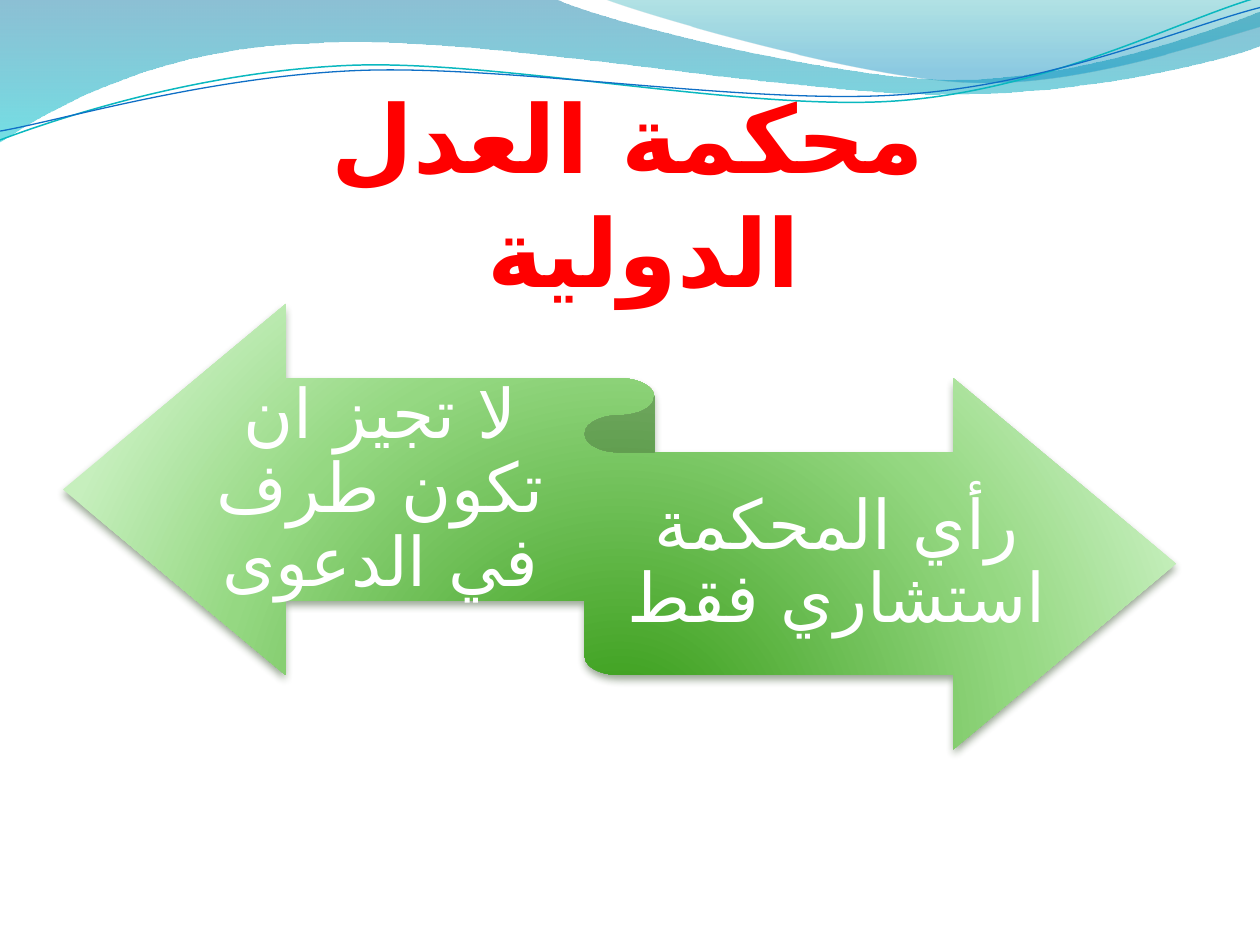
from lxml import etree
from pptx import Presentation
from pptx.dml.color import RGBColor
from pptx.enum.shapes import MSO_SHAPE
from pptx.enum.text import MSO_ANCHOR, MSO_AUTO_SIZE, PP_ALIGN
from pptx.oxml.ns import qn
from pptx.util import Pt

RIBBON = MSO_SHAPE.LEFT_RIGHT_RIBBON
TOP, MIDDLE = MSO_ANCHOR.TOP, MSO_ANCHOR.MIDDLE
CENTER = PP_ALIGN.CENTER
NO_AUTOFIT = MSO_AUTO_SIZE.NONE

FONT = "TeX Gyre Pagella"
ARABIC_FONT = "DejaVu Sans"
WHITE = RGBColor(0xFF, 0xFF, 0xFF)
RED = RGBColor(0xFF, 0x00, 0x00)
DEEP_BLUE = RGBColor(0x00, 0x74, 0xA1)
AQUA = RGBColor(0x00, 0xC6, 0xCF)
TEAL = RGBColor(0x00, 0xA1, 0xA9)
SKY = RGBColor(0x00, 0x8B, 0xBF)
TEAL_LINE = RGBColor(0x0A, 0xB8, 0xBF)
BLUE_LINE = RGBColor(0x0F, 0x6F, 0xC6)
DARK_GREEN = RGBColor(0x31, 0x98, 0x11)
MID_GREEN = RGBColor(0x95, 0xD8, 0x82)
PALE_GREEN = RGBColor(0xC6, 0xEF, 0xBD)
SHADOW_GREEN = RGBColor(0x2B, 0x48, 0x21)

WAVE_FILLS = [
    ((0, 0),
     [[(317, -0.7)],
      [(343, 12), (478, 45.4), (546, 45.4)],
      [(614, 45.4), (690, 18.7), (720, 6.5)],
      [(720.7, 26)],
      [(708, 31.7), (626, 54.7), (537, 54)],
      [(448, 54), (275, 20.2), (185, 24.5)],
      [(93, 26), (33, 59.8), (-0.7, 81.4)]],
     [(0, DEEP_BLUE, 45), (100, AQUA, 55)]),
    ((345, -0.7),
     [[(366.5, 8), (491, 44.6), (553.7, 46.8)],
      [(616.3, 49.7), (692, 23), (720, 15.1)],
      [(720, 0)]],
     [(0, TEAL, 30), (80, SKY, 45)]),
]
WAVE_LINES = [
    ((0, 80),
     [[(34.6, 67), (113.8, 41), (199.4, 37.4)],
      [(284.4, 33.8), (427, 64.1), (513.4, 57.6)],
      [(599.8, 51.1), (675.4, 10.8), (718.6, -1.4)]],
     TEAL_LINE, 0.85),
    ((0, 74.9),
     [[(33.8, 69.1), (118, 43.9), (203.8, 40.3)],
      [(290.2, 36.7), (429.8, 60.5), (516.2, 54)],
      [(602, 48.2), (677.5, 15.1), (720, 4.3)]],
     BLUE_LINE, 0.75),
]


def add_color(parent, color, alpha):
    """Append an sRGB colour with an opacity in percent."""
    node = etree.SubElement(parent, qn("a:srgbClr"), val=str(color))
    etree.SubElement(node, qn("a:alpha"), val=str(alpha * 1000))


def set_gradient(shape, stops, focus=None):
    """Fill downwards, or circularly around a focus rectangle in percent."""
    shape.fill.background()
    properties = shape._element.spPr
    gradient = etree.Element(qn("a:gradFill"), rotWithShape="1")
    properties.replace(properties.find(qn("a:noFill")), gradient)
    stop_list = etree.SubElement(gradient, qn("a:gsLst"))
    for position, color, alpha in stops:
        stop = etree.SubElement(stop_list, qn("a:gs"), pos=str(position * 1000))
        add_color(stop, color, alpha)
    if focus:
        circle = etree.SubElement(gradient, qn("a:path"))
        circle.set("path", "circle")
        sides = {side: str(value * 1000) for side, value in zip("ltrb", focus)}
        etree.SubElement(circle, qn("a:fillToRect"), **sides)
    else:
        etree.SubElement(gradient, qn("a:lin"), ang="5400000", scaled="0")


def draw_wave(slide, left, top, start, segments, close):
    """Draw one outline whose three-point segments are cubic curves."""
    points = [(Pt(left + x), Pt(top + y))
              for x, y in [start, *(point for segment in segments for point in segment)]]
    builder = slide.shapes.build_freeform(*points[0], scale=1.0)
    builder.add_line_segments(points[1:], close=close)
    wave = builder.convert_to_shape()
    wave.shadow.inherit = False
    outline = next(wave._element.spPr.iter(qn("a:path")))
    straight = iter(outline.findall(qn("a:lnTo")))
    for segment in segments:
        steps = [next(straight) for _ in segment]
        if len(steps) == 3:
            curve = etree.Element(qn("a:cubicBezTo"))
            steps[0].addprevious(curve)
            for step in steps:
                curve.append(step[0])
                outline.remove(step)
    return wave


def add_waves(slide, left, top):
    """Draw the header band of filled waves and thin curves."""
    for start, segments, stops in WAVE_FILLS:
        wave = draw_wave(slide, left, top, start, segments, True)
        set_gradient(wave, stops)
        wave.line.fill.background()
    for start, segments, color, width in WAVE_LINES:
        curve = draw_wave(slide, left, top, start, segments, False)
        curve.fill.background()
        curve.line.color.rgb = color
        curve.line.width = Pt(width)


def write_arabic(frame, text, size, color, bold=False):
    """Write one centred right-to-left paragraph."""
    frame.word_wrap = True
    frame.auto_size = NO_AUTOFIT
    frame.text = text
    paragraph = frame.paragraphs[0]
    paragraph.alignment = CENTER
    paragraph._p.get_or_add_pPr().set("rtl", "1")
    font = paragraph.runs[0].font
    font.name, font.size, font.bold = FONT, Pt(size), bold
    font.color.rgb = color
    etree.SubElement(font._element, qn("a:cs"), typeface=ARABIC_FONT)
    return paragraph


def add_title(slide, left, top, width, height):
    """Place the court's name in the title placeholder."""
    title = slide.shapes.title
    title.left, title.top, title.width, title.height = map(Pt, (left, top, width, height))
    title.text_frame.vertical_anchor = TOP
    write_arabic(title.text_frame, "محكمة العدل الدولية ", 54, RED, True)


def add_ribbon(slide, left, top, width, height):
    """Draw the two-way ribbon with a statement on each arm."""
    ribbon = slide.shapes.add_shape(RIBBON, *map(Pt, (left, top, width, height)))
    set_gradient(ribbon, [(0, DARK_GREEN, 100), (68, MID_GREEN, 100), (100, PALE_GREEN, 100)],
                 (50, 130, 50, -30))
    ribbon.line.fill.background()
    ribbon.shadow.inherit = False
    effects = ribbon._element.spPr.find(qn("a:effectLst"))
    shadow = etree.SubElement(effects, qn("a:outerShdw"), blurRad=str(Pt(4.5)),
                              dist=str(Pt(3)), dir="5400000", rotWithShape="0")
    add_color(shadow, SHADOW_GREEN, 48)

    statements = [
        ("لا تجيز ان تكون طرف في الدعوى", 0.12, 0.175, 0.33),
        ("رأي المحكمة استشاري فقط", 0.5, 0.34, 0.39),
    ]
    for text, x, y, share in statements:
        statement = slide.shapes.add_textbox(
            Pt(left + x * width), Pt(top + y * height), Pt(share * width), Pt(0.49 * height))
        frame = statement.text_frame
        frame.margin_left = frame.margin_right = Pt(0)
        frame.margin_top, frame.margin_bottom = Pt(10.8), Pt(11.5)
        frame.vertical_anchor = MIDDLE
        write_arabic(frame, text, 39, WHITE).line_spacing = 0.9


def main():
    """Build and save the slide."""
    deck = Presentation()
    deck.slide_width, deck.slide_height = Pt(720), Pt(540)
    slide = deck.slides.add_slide(deck.slide_layouts[5])
    add_waves(slide, 0, 0)
    add_ribbon(slide, 36, 173.7, 636, 254.4)
    add_title(slide, 167.8, 41.8, 381.6, 72.7)
    deck.save("out.pptx")


if __name__ == "__main__":
    main()
